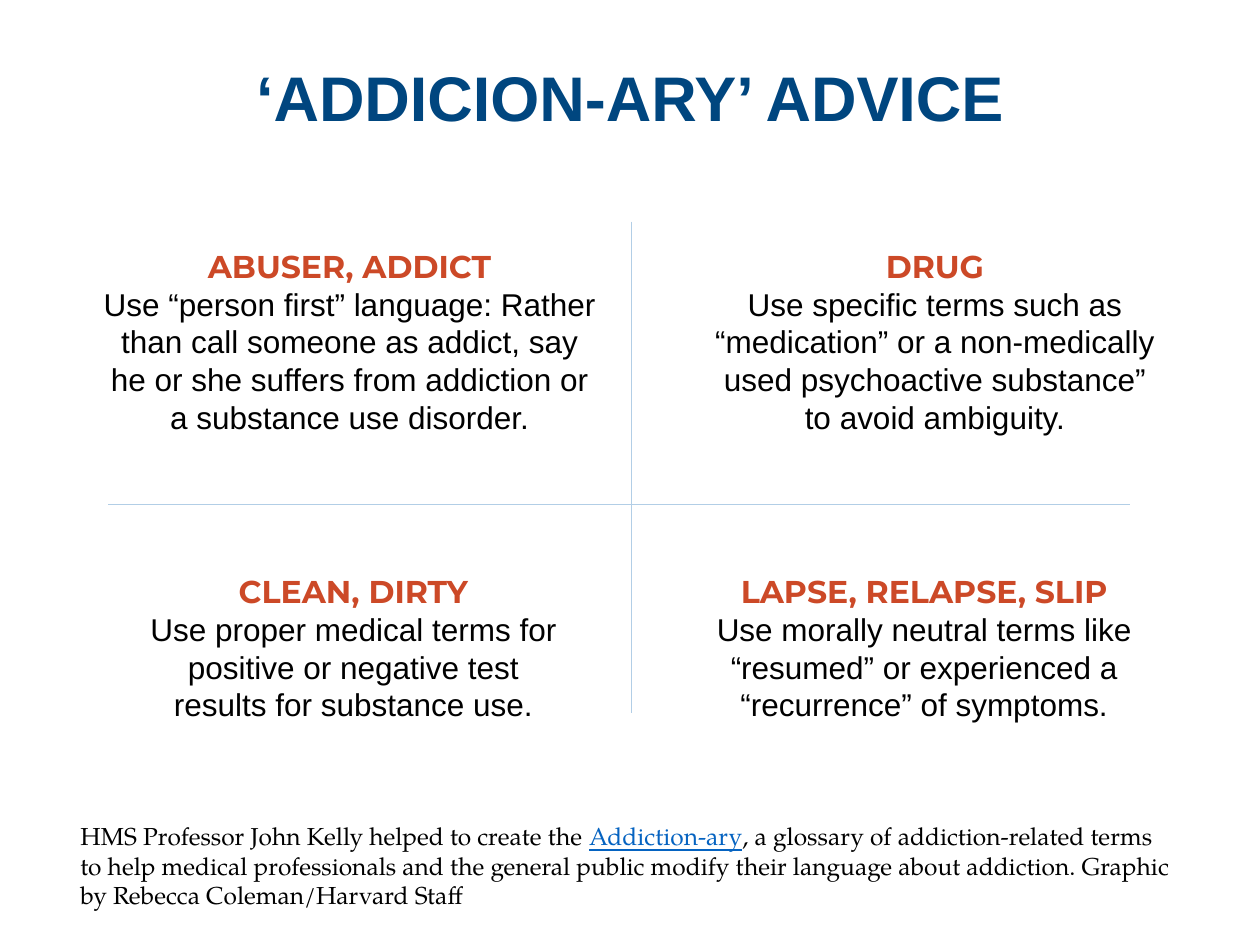
from lxml import etree
from pptx import Presentation
from pptx.dml.color import RGBColor
from pptx.enum.shapes import MSO_CONNECTOR
from pptx.enum.text import MSO_ANCHOR, MSO_AUTO_SIZE, PP_ALIGN
from pptx.oxml.ns import qn
from pptx.util import Inches, Pt

NAVY, RUST, BLACK = "00467F", "CC4927", "000000"
LINK, RULE = "0563C1", "B2CEE6"

TOP, BOTTOM = 1.91, 4.49
ADVICE = [
    ((0.69, TOP, 4.17, 1.61), "ABUSER, ADDICT",
     "Use “person first” language: Rather than call someone as addict, say "
     "he or she suffers from addiction or a substance use disorder."),
    ((5.53, TOP, 3.78, 1.61), "DRUG",
     "Use specific terms such as “medication” or a non-medically used "
     "psychoactive substance” to avoid ambiguity."),
    ((1.09, BOTTOM, 3.43, 1.31), "CLEAN, DIRTY",
     "Use proper medical terms for positive or negative test results for "
     "substance use."),
    ((5.53, BOTTOM, 3.61, 1.31), "LAPSE, RELAPSE, SLIP",
     "Use morally neutral terms like “resumed” or experienced a "
     "“recurrence” of symptoms."),
]
RULES = [(5.01, 1.76, 5.01, 5.66), (0.86, 4, 8.97, 4)]


def rgb(color):
    return RGBColor.from_string(color)


def add_run(p, text, color, **font):
    r = p.add_run()
    r.text = text
    r.font.color.rgb = rgb(color)
    for name, value in font.items():
        setattr(r.font, name, value)


def add_text_frame(s, box):
    tf = s.shapes.add_textbox(*map(Inches, box)).text_frame
    tf.word_wrap = True
    tf.auto_size = MSO_AUTO_SIZE.SHAPE_TO_FIT_TEXT
    return tf


def add_title(s, box, text):
    sp = s.shapes.title
    sp.left, sp.top, sp.width, sp.height = map(Inches, box)
    tf = sp.text_frame
    tf.word_wrap = True
    tf.vertical_anchor = MSO_ANCHOR.MIDDLE
    p = tf.paragraphs[0]
    p.alignment, p.line_spacing = PP_ALIGN.CENTER, 0.9
    add_run(p, text, NAVY, name="Arial", size=Pt(36), bold=True)


def add_advice(s, box, term, advice):
    tf = add_text_frame(s, box)
    heading, body = tf.paragraphs[0], tf.add_paragraph()
    heading.alignment = body.alignment = PP_ALIGN.CENTER
    add_run(heading, term, RUST, name="Montserrat", size=Pt(18), bold=True)
    add_run(body, advice, BLACK, name="Arial", size=Pt(18))


def add_rule(s, ends):
    line = s.shapes.add_connector(MSO_CONNECTOR.STRAIGHT, *map(Inches, ends))
    line.line.color.rgb = rgb(RULE)
    line.line.width = Pt(0.5)
    etree.SubElement(line._element.spPr, qn("a:effectLst"))


def add_credit(s, box):
    p = add_text_frame(s, box).paragraphs[0]
    font = dict(name="TeX Gyre Pagella", size=Pt(14))
    add_run(p, "HMS Professor John Kelly helped to create the ", BLACK, **font)
    add_run(p, "Addiction-ary", LINK, underline=True, **font)
    add_run(p, ", a glossary of addiction-related terms to help medical "
            "professionals and the general public modify their language about "
            "addiction. Graphic by Rebecca Coleman/Harvard Staff", BLACK, **font)


def main():
    prs = Presentation()
    prs.slide_width, prs.slide_height = Inches(10), Inches(7.5)
    s = prs.slides.add_slide(prs.slide_layouts[5])
    add_title(s, (0.69, 0.32, 8.62, 0.97), "‘ADDICION-ARY’ ADVICE")
    for box, term, advice in ADVICE:
        add_advice(s, box, term, advice)
    add_credit(s, (0.54, 6.47, 8.92, 0.81))
    for ends in RULES:
        add_rule(s, ends)
    prs.save("out.pptx")


if __name__ == "__main__":
    main()
